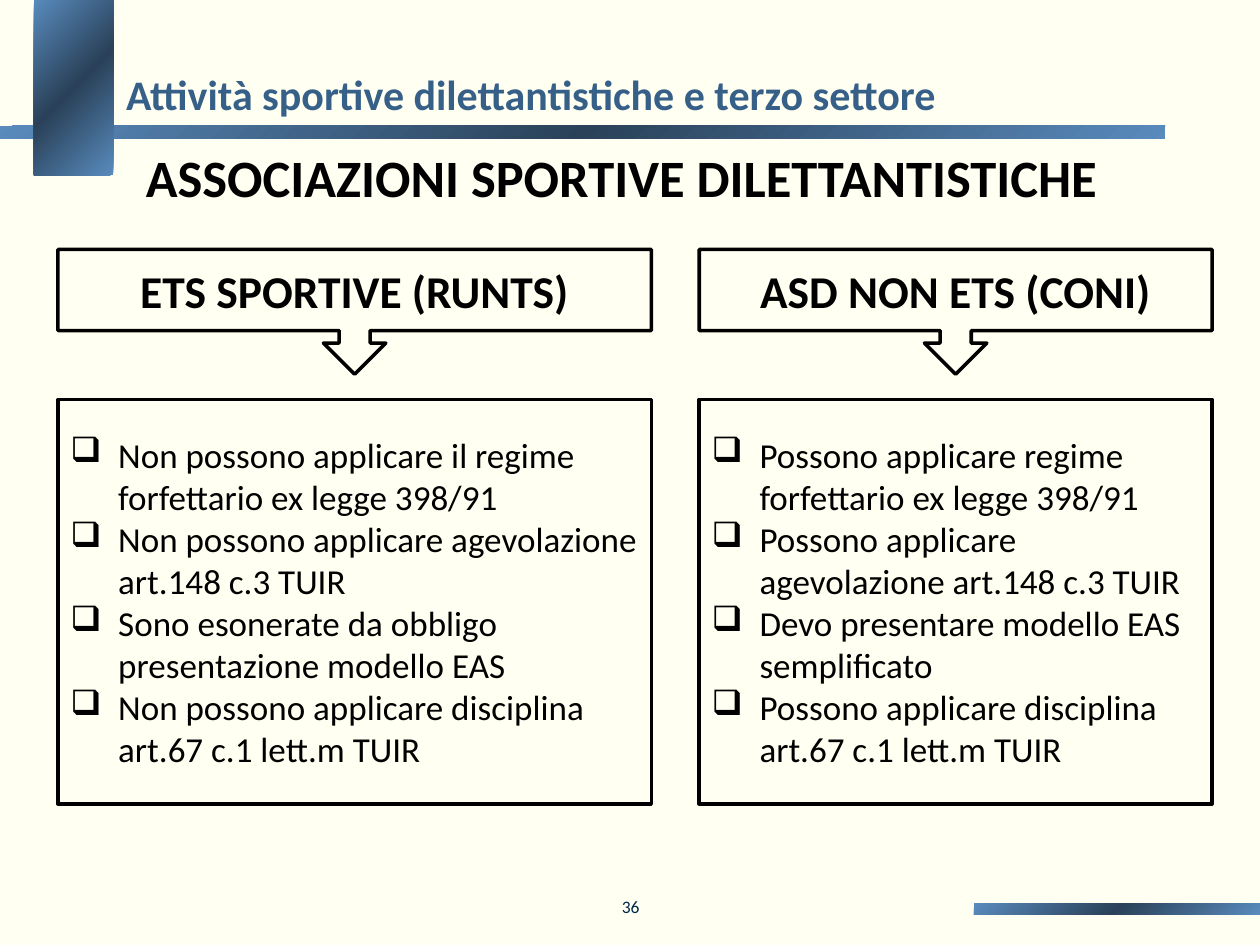
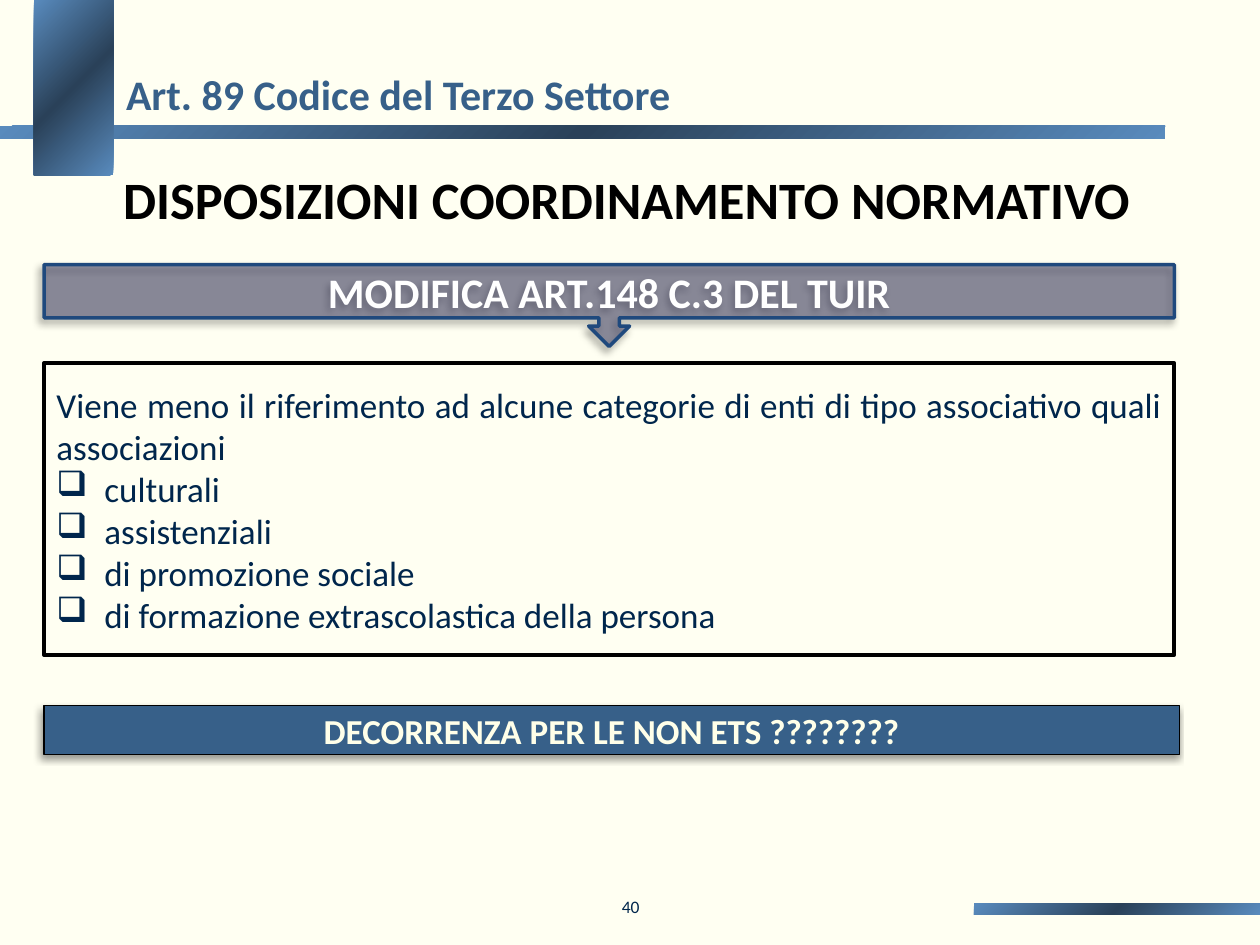
from copy import deepcopy
from dataclasses import dataclass
from typing import Any, NamedTuple

from lxml import etree
from pptx import Presentation
from pptx.dml.color import RGBColor
from pptx.enum.shapes import MSO_SHAPE
from pptx.enum.text import MSO_ANCHOR, MSO_AUTO_SIZE, PP_ALIGN
from pptx.oxml.ns import qn
from pptx.util import Emu, Pt

RECT = MSO_SHAPE.RECTANGLE
CALLOUT = MSO_SHAPE.DOWN_ARROW_CALLOUT
LEFT, CENTER, JUSTIFY = PP_ALIGN.LEFT, PP_ALIGN.CENTER, PP_ALIGN.JUSTIFY
TOP, MIDDLE, BOTTOM = MSO_ANCHOR.TOP, MSO_ANCHOR.MIDDLE, MSO_ANCHOR.BOTTOM
NO_FIT = MSO_AUTO_SIZE.NONE

PX = 9144
FONT = "Calibri"
BACKGROUND = "FFFFF2"
BLACK = "000000"
WHITE = "FFFFFF"
IVORY = "FFFFE9"
NAVY = "00264C"
BLUE = "376089"
OUTLINE_BLUE = "1F497D"
INDIGO = "19194D"
BAND_STOPS = [(0, "598BBD"), (0.5, "2A4159"), (1, "598BBD")]
BULLET = "❑"
BULLET_INDENT = 38


class Box(NamedTuple):
    x: int
    y: int
    w: int
    h: int


class TextStyle(NamedTuple):
    size: int
    color: str = BLACK
    bold: bool = False
    align: Any = LEFT
    anchor: Any = MIDDLE
    spacing: float = 1.0


class Item(NamedTuple):
    text: str
    bullet: bool = False


@dataclass
class Panel:
    box: Box
    items: list[Item]
    style: TextStyle
    kind: Any = RECT
    fill: str | None = None
    opacity: int = 100
    line: str = BLACK
    line_width: float = 2
    shadow: bool = False


@dataclass
class Page:
    title: str
    heading: str
    heading_box: Box
    number: str
    panels: list[Panel]


BANDS = [Box(0, 100, 925, 10), Box(27, 0, 63, 139), Box(773, 717, 227, 9)]
TITLE_BOX = Box(90, 49, 701, 50)
NUMBER_BOX = Box(342, 683, 317, 50)

TITLE = TextStyle(24, BLUE, True, anchor=TOP)
HEADING = TextStyle(30, bold=True, align=CENTER, anchor=TOP, spacing=1.1)
NUMBER = TextStyle(10, NAVY, align=CENTER, anchor=BOTTOM)
COLUMN_HEAD = TextStyle(26, bold=True, align=CENTER)
COLUMN_BODY = TextStyle(20)
CHANGE_HEAD = TextStyle(24, WHITE, True, CENTER)
CHANGE_BODY = TextStyle(20, NAVY, align=JUSTIFY)
START_DATE = TextStyle(20, IVORY, True, CENTER)


def rgb(value: str) -> RGBColor:
    return RGBColor.from_string(value)


def emu(box: Box) -> list[Emu]:
    return [Emu(v * PX) for v in box]


def bullets(*texts: str) -> list[Item]:
    return [Item(text, True) for text in texts]


def add_xml(parent: Any, tag: str, **attrs: Any) -> Any:
    return etree.SubElement(parent, qn(tag), {k: str(v) for k, v in attrs.items()})


def write(sp: Any, items: list[Item], style: TextStyle) -> None:
    tf = sp.text_frame
    frame = {"word_wrap": True, "auto_size": NO_FIT, "vertical_anchor": style.anchor}
    for name, value in frame.items():
        setattr(tf, name, value)
    for i, item in enumerate(items):
        p = tf.paragraphs[0] if i == 0 else tf.add_paragraph()
        p.alignment = style.align
        p.line_spacing = style.spacing
        if item.bullet:
            pPr = p._p.get_or_add_pPr()
            indent = BULLET_INDENT * PX
            pPr.set("marL", str(indent))
            pPr.set("indent", str(-indent))
            add_xml(pPr, "a:buChar", char=BULLET)
        r = p.add_run()
        r.text = item.text
        font = {"name": FONT, "size": Pt(style.size), "bold": style.bold}
        for name, value in font.items():
            setattr(r.font, name, value)
        r.font.color.rgb = rgb(style.color)


def add_text(slide: Any, box: Box, text: str, style: TextStyle) -> None:
    write(slide.shapes.add_textbox(*emu(box)), [Item(text)], style)


def add_shadow(sp: Any) -> None:
    effects = sp._element.spPr.find(qn("a:effectLst"))
    shadow = add_xml(effects, "a:outerShdw", blurRad=Pt(4), dist=Pt(3),
                     dir=135 * 60000, algn="tl", rotWithShape=0)
    color = add_xml(shadow, "a:srgbClr", val=BLACK)
    add_xml(color, "a:alpha", val=40000)


def add_panel(slide: Any, panel: Panel) -> None:
    sp = slide.shapes.add_shape(panel.kind, *emu(panel.box))
    sp.shadow.inherit = False
    if panel.fill:
        sp.fill.solid()
        sp.fill.fore_color.rgb = rgb(panel.fill)
        if panel.opacity < 100:
            color = sp._element.spPr.find(qn("a:solidFill"))[0]
            add_xml(color, "a:alpha", val=panel.opacity * 1000)
    else:
        sp.fill.background()
    sp.line.color.rgb = rgb(panel.line)
    sp.line.width = Pt(panel.line_width)
    if panel.shadow:
        add_shadow(sp)
    write(sp, panel.items, panel.style)


def add_band(slide: Any, box: Box) -> Any:
    sp = slide.shapes.add_shape(RECT, *emu(box))
    sp.shadow.inherit = False
    sp.line.fill.background()
    sp.fill.gradient()
    sp.fill.gradient_angle = 315
    stops = sp._element.spPr.find(qn("a:gradFill")).find(qn("a:gsLst"))
    stops.insert(1, deepcopy(stops[0]))
    for stop, (position, color) in zip(sp.fill.gradient_stops, BAND_STOPS):
        stop.position = position
        stop.color.rgb = rgb(color)
    return sp


def move_to_layout(sp: Any, layout: Any, index: int) -> None:
    layout.shapes._spTree.insert(2 + index, sp._element)


def add_page(prs: Any, layout: Any, page: Page) -> Any:
    slide = prs.slides.add_slide(layout)
    title = slide.shapes.title
    for name, value in zip(("left", "top", "width", "height"), emu(TITLE_BOX)):
        setattr(title, name, value)
    write(title, [Item(page.title)], TITLE)
    add_text(slide, page.heading_box, page.heading, HEADING)
    for panel in page.panels:
        add_panel(slide, panel)
    add_text(slide, NUMBER_BOX, page.number, NUMBER)
    return slide


def column(x: int, w: int, head: str, *points: str) -> list[Panel]:
    return [
        Panel(Box(x, 317, w, 321), bullets(*points), COLUMN_BODY),
        Panel(Box(x, 198, w, 99), [Item(head)], COLUMN_HEAD, CALLOUT),
    ]


PAGES = [
    Page(
        "Attività sportive dilettantistiche e terzo settore",
        "ASSOCIAZIONI SPORTIVE DILETTANTISTICHE",
        Box(0, 105, 987, 63),
        "36",
        column(
            46, 471, "ETS SPORTIVE (RUNTS)",
            "Non possono applicare il regime forfettario ex legge 398/91",
            "Non possono applicare agevolazione art.148 c.3 TUIR",
            "Sono esonerate da obbligo presentazione modello EAS",
            "Non possono applicare disciplina art.67 c.1 lett.m TUIR",
        ) + column(
            555, 407, "ASD NON ETS (CONI)",
            "Possono applicare regime forfettario ex legge 398/91",
            "Possono applicare agevolazione art.148 c.3 TUIR",
            "Devo presentare modello EAS semplificato",
            "Possono applicare disciplina art.67 c.1 lett.m TUIR",
        ),
    ),
    Page(
        "Art. 89 Codice del Terzo Settore",
        "DISPOSIZIONI COORDINAMENTO NORMATIVO",
        Box(4, 123, 987, 63),
        "40",
        [
            Panel(Box(35, 210, 897, 65), [Item("MODIFICA ART.148 C.3 DEL TUIR")],
                  CHANGE_HEAD, CALLOUT, INDIGO, 41, OUTLINE_BLUE, shadow=True),
            Panel(
                Box(35, 288, 897, 232),
                [Item("Viene meno il riferimento ad alcune categorie di enti "
                      "di tipo associativo quali associazioni")]
                + bullets("culturali", "assistenziali", "di promozione sociale",
                          "di formazione extrascolastica della persona"),
                CHANGE_BODY,
            ),
            Panel(Box(35, 560, 901, 39), [Item("DECORRENZA PER LE NON ETS ????????")],
                  START_DATE, fill=BLUE, line_width=0.75, shadow=True),
        ],
    ),
]


def main() -> None:
    prs = Presentation()
    prs.slide_width, prs.slide_height = Emu(1000 * PX), Emu(750 * PX)
    fill = prs.slide_master.background.fill
    fill.solid()
    fill.fore_color.rgb = rgb(BACKGROUND)
    layout = prs.slide_layouts[5]
    slides = [add_page(prs, layout, page) for page in PAGES]
    for i, box in enumerate(BANDS):
        move_to_layout(add_band(slides[0], box), layout, i)
    prs.save("out.pptx")


if __name__ == "__main__":
    main()
